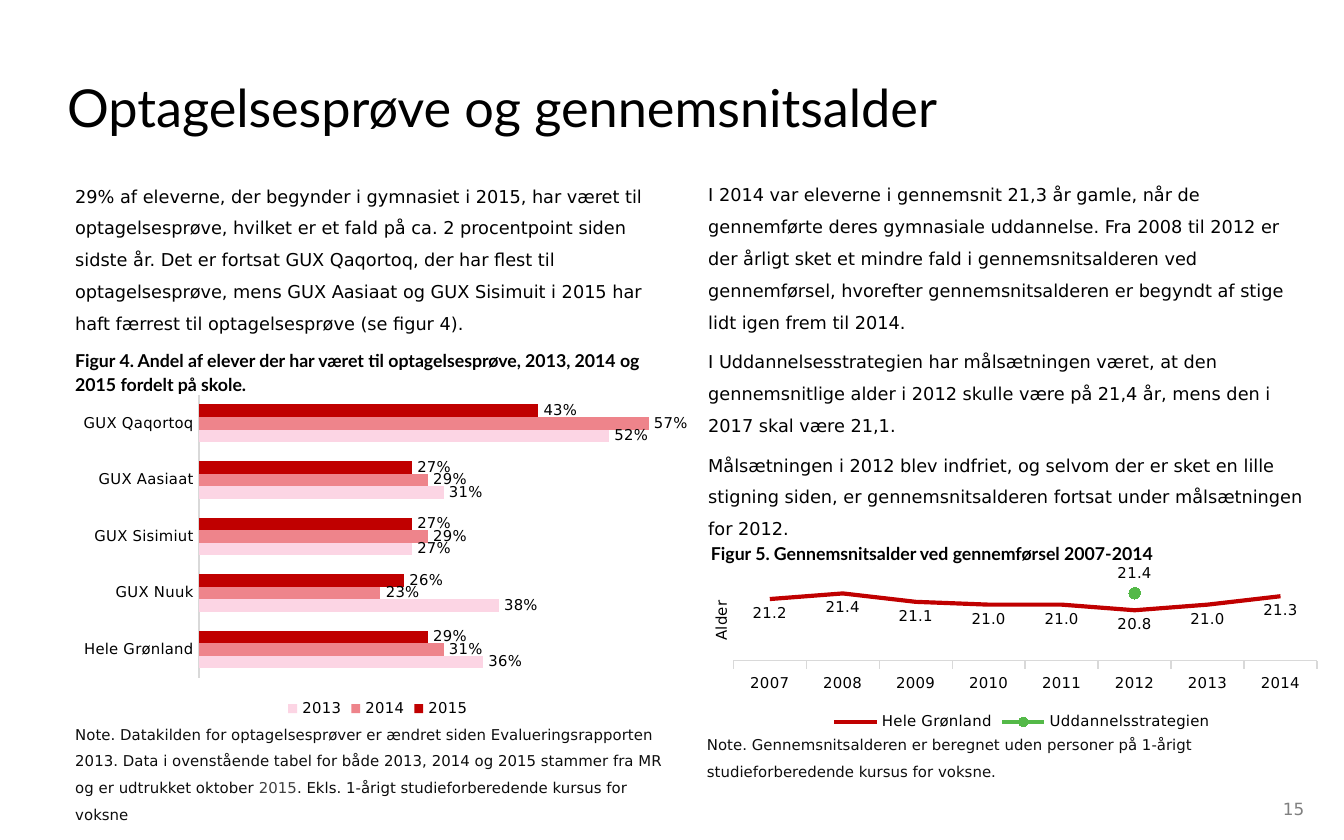
from lxml.etree import SubElement
from pptx import Presentation
from pptx.chart.data import CategoryChartData
from pptx.dml.color import RGBColor
from pptx.enum.chart import (XL_CHART_TYPE, XL_LABEL_POSITION, XL_LEGEND_POSITION,
                             XL_MARKER_STYLE, XL_TICK_LABEL_POSITION, XL_TICK_MARK)
from pptx.enum.text import MSO_ANCHOR, PP_ALIGN
from pptx.oxml.ns import qn
from pptx.util import Pt

PX = 9144  # 100 px to the inch
SANS, LATO = "DejaVu Sans", "Lato"
BLACK = RGBColor(0x00, 0x00, 0x00)
NOTE = RGBColor(0x0D, 0x0D, 0x0D)
DARK_GRAY = RGBColor(0x40, 0x40, 0x40)
GRAY = RGBColor(0x80, 0x80, 0x80)
AXIS = RGBColor(0xD9, 0xD9, 0xD9)
RED = RGBColor(0xC0, 0x00, 0x00)
ROSE = RGBColor(0xEE, 0x84, 0x8B)
PINK = RGBColor(0xFC, 0xD5, 0xE4)
GREEN = RGBColor(0x54, 0xB9, 0x48)

INTRO = ("29% af eleverne, der begynder i gymnasiet i 2015, har været til optagelsesprøve, "
         "hvilket er et fald på ca. 2 procentpoint siden sidste år. Det er fortsat GUX Qaqortoq, "
         "der har flest til optagelsesprøve, mens GUX Aasiaat og GUX Sisimuit i 2015 har haft "
         "færrest til optagelsesprøve (se figur 4).")
AGE_PARAGRAPHS = [
    "I 2014 var eleverne i gennemsnit 21,3 år gamle, når de gennemførte deres gymnasiale "
    "uddannelse. Fra 2008 til 2012 er der årligt sket et mindre fald i gennemsnitsalderen ved "
    "gennemførsel, hvorefter gennemsnitsalderen er begyndt af stige lidt igen frem til 2014.",
    "I Uddannelsesstrategien har målsætningen været, at den gennemsnitlige alder i 2012 skulle "
    "være på 21,4 år, mens den i 2017 skal være 21,1.",
    "Målsætningen i 2012 blev indfriet, og selvom der er sket en lille stigning siden, er "
    "gennemsnitsalderen fortsat under målsætningen for 2012.",
]
TEST_NOTE = [
    ("Note. Datakilden for optagelsesprøver er ændret siden Evalueringsrapporten 2013. Data i "
     "ovenstående tabel for både 2013, 2014 og 2015 stammer fra MR og er udtrukket oktober ", NOTE),
    ("2015", DARK_GRAY),
    (". Ekls. 1-årigt studieforberedende kursus for voksne", NOTE),
]
AGE_NOTE = ("Note. Gennemsnitsalderen er beregnet uden personer på 1-årigt studieforberedende "
            "kursus for voksne.")

SCHOOLS = ["GUX Qaqortoq", "GUX Aasiaat", "GUX Sisimiut", "GUX Nuuk", "Hele Grønland"]
TEST_SHARES = [
    ("2015", RED, [0.43, 0.27, 0.27, 0.26, 0.29]),
    ("2014", ROSE, [0.57, 0.29, 0.29, 0.23, 0.31]),
    ("2013", PINK, [0.52, 0.31, 0.27, 0.38, 0.36]),
]
YEARS = [str(year) for year in range(2007, 2015)]
MEAN_AGES = [21.2, 21.4, 21.1, 21.0, 21.0, 20.8, 21.0, 21.3]
TARGET_AGES = [21.4 if year == "2012" else None for year in YEARS]


def scaled(box):
    return [length * PX for length in box]


def format_font(font, size, name=SANS, color=BLACK, bold=False):
    font.size, font.name, font.bold = Pt(size), name, bold
    font.color.rgb = color


def write_text(frame, paragraphs, *, size, name=SANS, color=BLACK, bold=False,
               line=1.5, space=2, align=PP_ALIGN.LEFT, anchor=MSO_ANCHOR.TOP):
    """A paragraph is a string or a list of (text, color) runs."""
    frame.word_wrap = True
    frame.vertical_anchor = anchor
    frame.margin_left = frame.margin_top = frame.margin_right = frame.margin_bottom = 0
    for index, content in enumerate(paragraphs):
        paragraph = frame.add_paragraph() if index else frame.paragraphs[0]
        paragraph.alignment, paragraph.line_spacing = align, line
        paragraph.space_before = Pt(space if index else 0)
        paragraph.space_after = Pt(space)
        for text, run_color in [(content, color)] if isinstance(content, str) else content:
            run = paragraph.add_run()
            run.text = text
            format_font(run.font, size, name, run_color, bold)


def add_text(slide, box, paragraphs, **text_format):
    write_text(slide.shapes.add_textbox(*scaled(box)).text_frame, paragraphs, **text_format)


def add_caption(slide, box, text):
    add_text(slide, box, [text], size=9.5, name=LATO, bold=True, line=1.14)


def set_layout(parent, target=None, **fractions):
    """Place a chart part by fractions of the chart area."""
    layout = parent.find(qn("c:layout"))
    if layout is None:
        layout = SubElement(parent, qn("c:layout"))
        anchor = parent.find(qn("c:tx"))
        if anchor is None:
            parent.insert(0, layout)
        else:
            anchor.addnext(layout)
    manual = SubElement(layout, qn("c:manualLayout"))
    settings = {"layoutTarget": target} if target else {}
    settings.update(xMode="edge", yMode="edge", **fractions)
    for tag, value in settings.items():
        SubElement(manual, qn(f"c:{tag}")).set("val", str(value))


def add_chart(slide, box, kind, categories, series, number_format, tick):
    data = CategoryChartData(number_format=number_format)
    data.categories = categories
    for name, values in series:
        data.add_series(name, values)
    chart = slide.shapes.add_chart(kind, *scaled(box), data).chart
    chart.has_title = False
    format_font(chart.font, 8)
    chart.has_legend = True
    chart.legend.position = XL_LEGEND_POSITION.BOTTOM
    chart.legend.include_in_layout = False
    format_font(chart.legend.font, 8)
    chart.plots[0].vary_by_categories = False
    axis = chart.category_axis
    axis.major_tick_mark, axis.minor_tick_mark = tick, XL_TICK_MARK.NONE
    axis.tick_label_position = XL_TICK_LABEL_POSITION.NEXT_TO_AXIS
    axis.format.line.color.rgb = AXIS
    axis.format.line.width = Pt(0.75)
    format_font(axis.tick_labels.font, 8)
    chart.value_axis.has_major_gridlines = False
    chart.value_axis.visible = False
    return chart


def label_series(series, number_format, position):
    labels = series.data_labels
    labels.show_value = True
    labels.number_format, labels.number_format_is_linked = number_format, False
    labels.position = position
    format_font(labels.font, 8)


def add_test_chart(slide, box):
    chart = add_chart(slide, box, XL_CHART_TYPE.BAR_CLUSTERED, SCHOOLS,
                      [(name, values) for name, _, values in TEST_SHARES],
                      "0%", XL_TICK_MARK.NONE)
    chart.category_axis.reverse_order = True
    chart.plots[0].gap_width = 150
    for series, (_, color, _) in zip(chart.plots[0].series, TEST_SHARES):
        series.format.fill.solid()
        series.format.fill.fore_color.rgb = color
        label_series(series, "0%", XL_LABEL_POSITION.OUTSIDE_END)


def add_age_chart(slide, box):
    chart = add_chart(slide, box, XL_CHART_TYPE.LINE_MARKERS, YEARS,
                      [("Hele Grønland", MEAN_AGES), ("Uddannelsstrategien", TARGET_AGES)],
                      "#,##0.0", XL_TICK_MARK.OUTSIDE)
    axis = chart.value_axis
    axis.minimum_scale, axis.maximum_scale, axis.major_unit = 19, 23, 5
    title = axis.axis_title
    title.text_frame.text = "Alder"
    format_font(title.text_frame.paragraphs[0].runs[0].font, 8)
    title.text_frame._txBody.bodyPr.set("rot", "-5400000")
    set_layout(title._element, x=0, y=0.32)
    set_layout(chart._chartSpace.chart.plotArea, "inner", x=0.04, y=0.08, w=0.93, h=0.55)
    styles = [(RED, XL_MARKER_STYLE.NONE, XL_LABEL_POSITION.BELOW),
              (GREEN, XL_MARKER_STYLE.CIRCLE, XL_LABEL_POSITION.ABOVE)]
    for series, (color, marker, position) in zip(chart.plots[0].series, styles):
        series.smooth = False
        series.format.line.color.rgb = color
        series.format.line.width = Pt(2.25)
        series.marker.style = marker
        if marker != XL_MARKER_STYLE.NONE:
            series.marker.size = 6
            series.marker.format.fill.solid()
            series.marker.format.fill.fore_color.rgb = color
            series.marker.format.line.color.rgb = color
        label_series(series, "#,##0.0", position)


def add_title(slide, box):
    title = slide.shapes.title
    title.left, title.top, title.width, title.height = scaled(box)
    write_text(title.text_frame, ["Optagelsesprøve og gennemsnitsalder"],
               size=28, name=LATO, line=1, space=0)


def add_test_column(slide, left, top, width):
    add_caption(slide, (left, top + 128, width, 36),
                "Figur 4. Andel af elever der har været til optagelsesprøve, "
                "2013, 2014 og 2015 fordelt på skole.")
    add_test_chart(slide, (left - 3, top + 159, width + 9, 249))
    add_text(slide, (left, top + 403, width - 9, 80), [TEST_NOTE], size=8)
    add_text(slide, (left, top, width, 124), [INTRO], size=9.5)


def add_age_column(slide, left, top, width):
    add_age_chart(slide, (left, top + 266, width + 17, 152))
    add_caption(slide, (left + 2, top + 272, width, 18),
                "Figur 5. Gennemsnitsalder ved gennemførsel 2007-2014")
    add_text(slide, (left - 1, top + 411, width - 9, 51), [AGE_NOTE], size=8, color=NOTE)
    add_text(slide, (left, top - 1, width, 268), AGE_PARAGRAPHS, size=9.5)


def main():
    presentation = Presentation()
    presentation.slide_width, presentation.slide_height = scaled((1000, 625))
    slide = presentation.slides.add_slide(presentation.slide_layouts[5])
    add_title(slide, (50, 56, 900, 59))
    add_age_column(slide, 527, 130, 450)
    add_test_column(slide, 56, 130, 450)
    add_text(slide, (950, 596, 25, 9), ["15"], size=9, color=GRAY, line=1.2,
             align=PP_ALIGN.CENTER, anchor=MSO_ANCHOR.MIDDLE)
    presentation.save("out.pptx")


if __name__ == "__main__":
    main()
